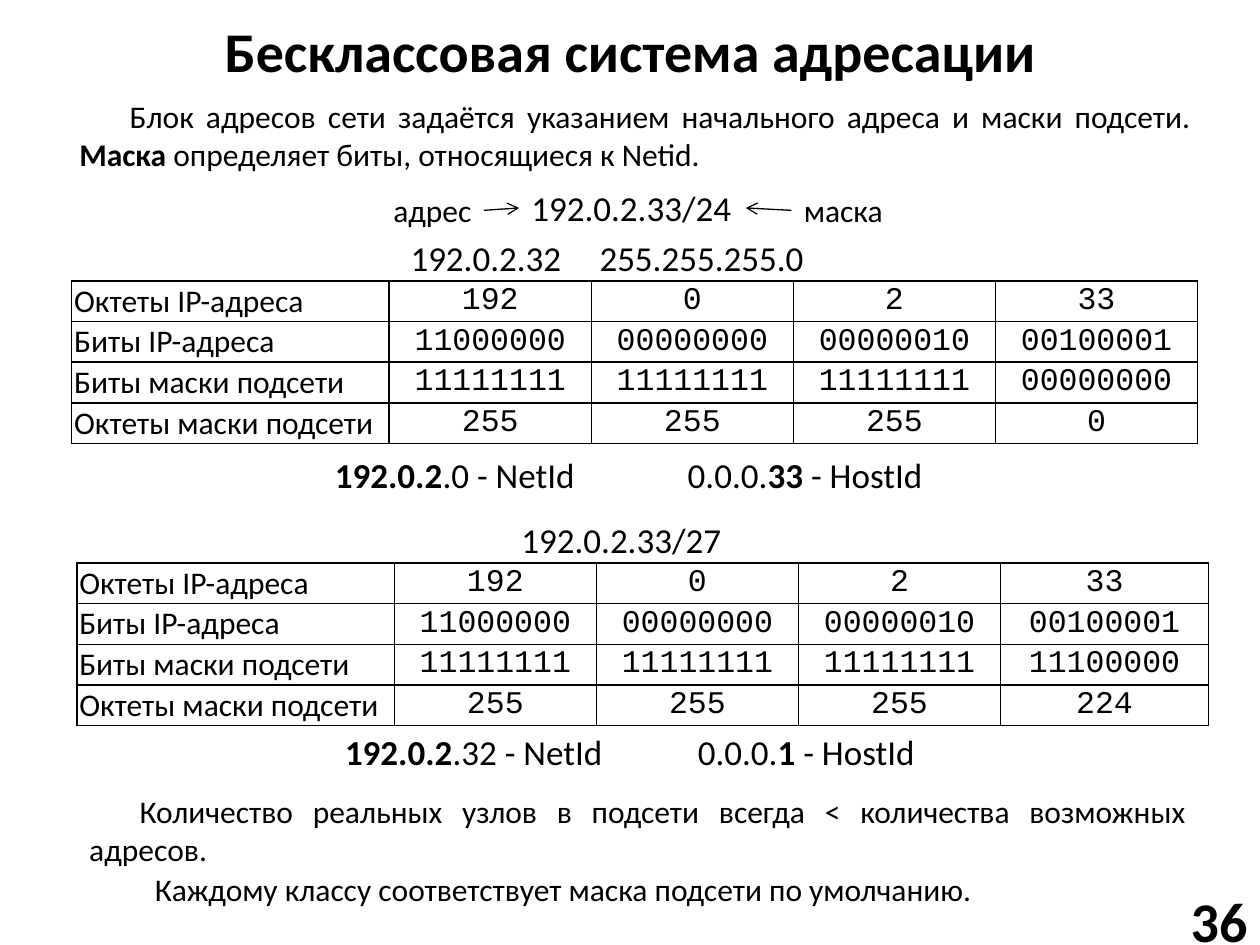
from pptx import Presentation
from pptx.dml.color import RGBColor
from pptx.enum.shapes import MSO_CONNECTOR
from pptx.enum.text import MSO_ANCHOR, MSO_AUTO_SIZE, PP_ALIGN
from pptx.oxml.ns import qn
from pptx.util import Pt
from lxml import etree

LEFT, CENTER, RIGHT, JUSTIFY = PP_ALIGN.LEFT, PP_ALIGN.CENTER, PP_ALIGN.RIGHT, PP_ALIGN.JUSTIFY
MIDDLE = MSO_ANCHOR.MIDDLE
GROW = MSO_AUTO_SIZE.SHAPE_TO_FIT_TEXT
STRAIGHT = MSO_CONNECTOR.STRAIGHT
LEFT_SIDE, RIGHT_SIDE = 1, 3

BODY_FONT, CODE_FONT = "Calibri", "Courier New"
BLACK = "000000"
FIRST_LINE = 28.8

HEADINGS = [
    ("Бесклассовая система адресации", (20.2, 3.6, 680.4, 49.7), CENTER),
    ("36", (637.9, 511.2, 82.1, 28.8), RIGHT),
]
PARAGRAPHS = [
    ([("Блок адресов сети задаётся указанием начального адреса и маски подсети. ", False),
      ("Маска", True),
      (" определяет биты, относящиеся к Netid.", False)], (38.2, 51.8, 649.4, 51.1)),
    ([("Количество реальных узлов в подсети всегда < количества возможных адресов.", False)],
     (43.9, 449.3, 640.8, 51.1)),
    ([("Каждому классу соответствует маска подсети по умолчанию.", False)],
     (52.6, 493.9, 640.8, 28.8)),
]
FORMULAS = [
    ([("192.0.2.32\t255.255.255.0", False)], 227.5, 131.8, 277.2),
    ([("192.0.2", True), (".0 - NetId", False)], 184.3, 255.6, 151.9),
    ([("0.0.0.", False), ("33", True), (" - HostId", False)], 385.9, 255.6, 149.8),
    ([("192.0.2.33/27", False)], 290.9, 293, 129.6),
    ([("192.0.2", True), (".32 - NetId", False)], 190.1, 414, 162.7),
    ([("0.0.0.", False), ("1", True), (" - HostId", False)], 391.7, 414, 139),
]
ADDRESS_WITH_PREFIX = ([("192.0.2.33/24", False)], 296.6, 103, 129.6)
CALLOUTS = [
    ("адрес", 155.5, RIGHT, RIGHT_SIDE, LEFT_SIDE),
    ("маска", 452.2, LEFT, LEFT_SIDE, RIGHT_SIDE),
]
ROW_LABELS = ["Октеты IP-адреса", "Биты IP-адреса", "Биты маски подсети", "Октеты маски подсети"]
ADDRESS = [192, 0, 2, 33]
SUBNETS = [
    ([255, 255, 255, 0], 41, 160.6, [181.4, 115.5, 115.5, 115.5, 115.5]),
    ([255, 255, 255, 224], 43.9, 321.8, [181.4, 115.5, 115.5, 115.5, 118.8]),
]
ROW_HEIGHT = 23.2


def color(value):
    return RGBColor.from_string(value)


def add_run(paragraph, text, size, bold=False, font=BODY_FONT):
    run = paragraph.add_run()
    run.text = text
    run.font.size = Pt(size)
    run.font.name = font
    run.font.bold = bold
    run.font.color.rgb = color(BLACK)


def add_text(slide, runs, box, size, align=LEFT, wrap=True, grow=True, indent=0):
    shape = slide.shapes.add_textbox(*map(Pt, box))
    frame = shape.text_frame
    frame.word_wrap = wrap
    if grow:
        frame.auto_size = GROW
    else:
        frame.vertical_anchor = MIDDLE
    paragraph = frame.paragraphs[0]
    paragraph.alignment = align
    if indent:
        properties = paragraph._p.get_or_add_pPr()
        properties.set("marL", "0")
        properties.set("indent", str(Pt(indent)))
    for text, bold in runs:
        add_run(paragraph, text, size, bold)
    return shape


def add_formula(slide, runs, left, top, width):
    return add_text(slide, runs, (left, top, width, 31.7), 20, wrap=False)


def add_arrow(slide, source, source_side, target, target_side):
    arrow = slide.shapes.add_connector(STRAIGHT, 0, 0, 0, 0)
    arrow.begin_connect(source, source_side)
    arrow.end_connect(target, target_side)
    arrow.line.color.rgb = color(BLACK)
    arrow.line.width = Pt(0.75)
    etree.SubElement(arrow.line._get_or_add_ln(), qn("a:tailEnd"), type="arrow")
    etree.SubElement(arrow._element.spPr, qn("a:effectLst"))


def add_borders(cell):
    properties = cell._tc.get_or_add_tcPr()
    for position, side in enumerate(("a:lnL", "a:lnR", "a:lnT", "a:lnB")):
        line = etree.Element(qn(side), w=str(Pt(1)))
        fill = etree.SubElement(line, qn("a:solidFill"))
        etree.SubElement(fill, qn("a:srgbClr"), val=BLACK)
        properties.insert(position, line)


def fill_cell(cell, text, font, align):
    cell.fill.background()
    add_borders(cell)
    cell.vertical_anchor = MIDDLE
    cell.margin_left = cell.margin_right = Pt(1.4)
    cell.margin_top = cell.margin_bottom = Pt(0.7)
    paragraph = cell.text_frame.paragraphs[0]
    paragraph.alignment = align
    add_run(paragraph, text, 18, font=font)


def to_bits(octets):
    return [format(octet, "08b") for octet in octets]


def add_subnet_table(slide, mask, left, top, widths):
    rows = [ADDRESS, to_bits(ADDRESS), to_bits(mask), mask]
    table = slide.shapes.add_table(
        len(rows), len(widths), Pt(left), Pt(top), Pt(sum(widths)), Pt(ROW_HEIGHT * len(rows))
    ).table
    table.first_row = table.horz_banding = False
    for column, width in zip(table.columns, widths):
        column.width = Pt(width)
    for row_index, (label, values) in enumerate(zip(ROW_LABELS, rows)):
        table.rows[row_index].height = Pt(ROW_HEIGHT)
        fill_cell(table.cell(row_index, 0), label, BODY_FONT, LEFT)
        for column_index, value in enumerate(values, 1):
            fill_cell(table.cell(row_index, column_index), str(value), CODE_FONT, CENTER)


def main():
    presentation = Presentation()
    presentation.slide_width, presentation.slide_height = Pt(720), Pt(540)
    slide = presentation.slides.add_slide(presentation.slide_layouts[6])

    for text, box, align in HEADINGS:
        add_text(slide, [(text, True)], box, 32, align, grow=False)
    for runs, box in PARAGRAPHS:
        add_text(slide, runs, box, 18, JUSTIFY, indent=FIRST_LINE)
    for subnet in SUBNETS:
        add_subnet_table(slide, *subnet)
    for formula in FORMULAS:
        add_formula(slide, *formula)

    address = add_formula(slide, *ADDRESS_WITH_PREFIX)
    for text, left, align, callout_side, address_side in CALLOUTS:
        callout = add_text(slide, [(text, False)], (left, 105.8, 121, 28.8), 18, align)
        add_arrow(slide, callout, callout_side, address, address_side)

    presentation.save("out.pptx")


if __name__ == "__main__":
    main()
